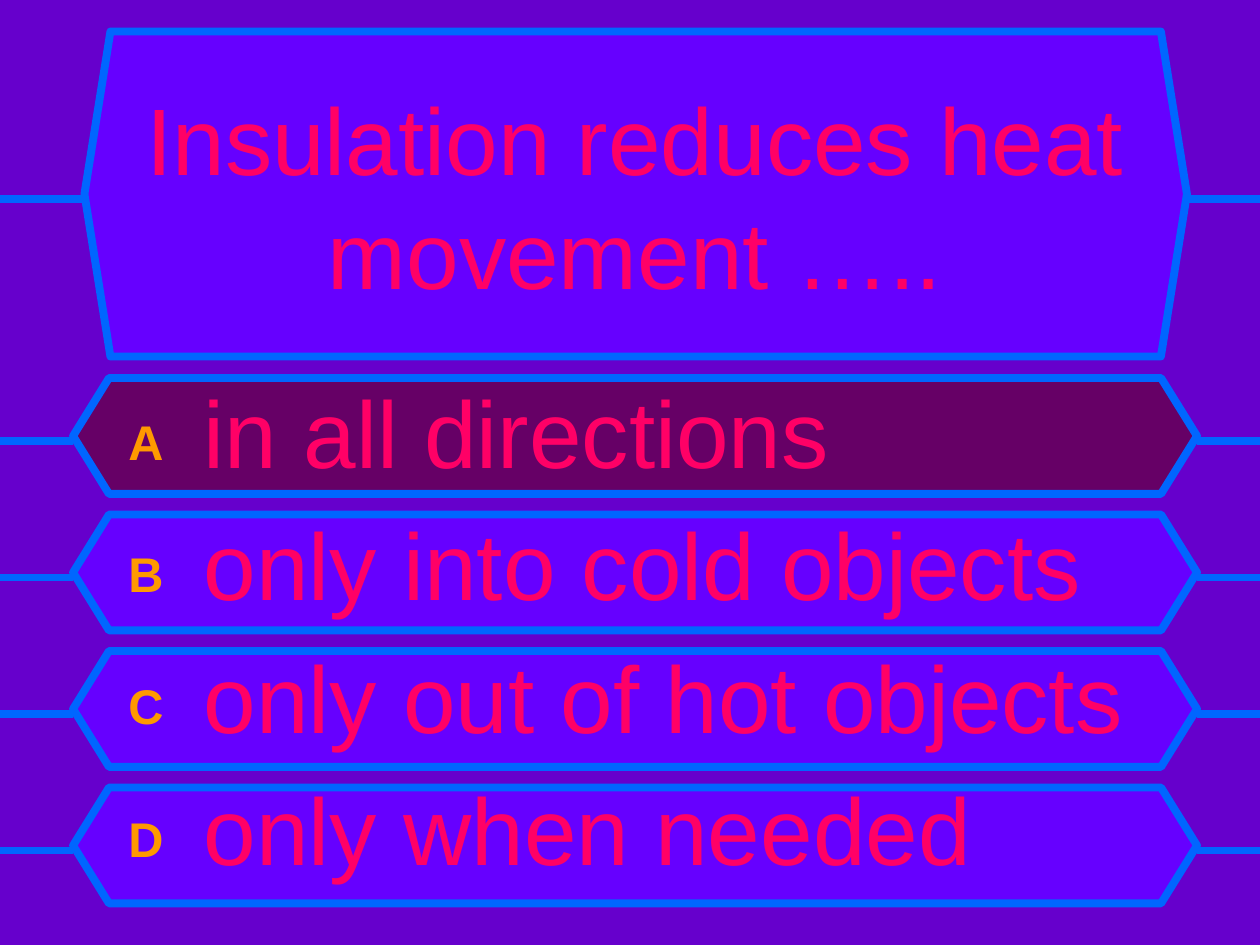
from pptx import Presentation
from pptx.dml.color import RGBColor
from pptx.enum.shapes import MSO_CONNECTOR as Connector, MSO_SHAPE as Shape
from pptx.enum.text import MSO_ANCHOR as Anchor, PP_ALIGN as Align
from pptx.oxml.ns import qn
from pptx.util import Inches, Pt
from lxml import etree

BACKGROUND = "6600CC"
PANEL = "6600FF"
HIGHLIGHT = "660066"
OUTLINE = "0066FF"
TEXT = "FF0066"
LETTER = "FF9900"
SLIDE_WIDTH = 10
ANSWER_TOP, ANSWER_PITCH = 3, 13 / 12
ANSWERS = ["in all directions", "only into cold objects",
           "only out of hot objects", "only when needed"]


def color(value):
    return RGBColor.from_string(value)


def style_line(line):
    line.color.rgb = color(OUTLINE)
    line.width = Pt(4.5)


def style_run(run, size, value, bold=False):
    run.font.name = "Arial"
    run.font.size = Pt(size)
    run.font.bold = bold
    run.font.color.rgb = color(value)


def add_rule(slide, start, end, y):
    rule = slide.shapes.add_connector(
        Connector.STRAIGHT, Inches(start), Inches(y), Inches(end), Inches(y))
    style_line(rule.line)
    etree.SubElement(rule._element.spPr, qn("a:effectLst"))


def add_panel(slide, left, top, width, height, point, fill, rule_y):
    """Hexagon with a rule running from each side to the slide edge."""
    panel = slide.shapes.add_shape(
        Shape.HEXAGON, Inches(left), Inches(top), Inches(width), Inches(height))
    panel.adjustments[0] = point
    panel.shadow.inherit = False
    panel.fill.solid()
    panel.fill.fore_color.rgb = color(fill)
    style_line(panel.line)
    add_rule(slide, left, 0, rule_y)
    add_rule(slide, SLIDE_WIDTH, left + width, rule_y)


def add_text_frame(slide, left, top, width, height, anchor):
    box = slide.shapes.add_textbox(
        Inches(left), Inches(top), Inches(width), Inches(height))
    text_frame = box.text_frame
    text_frame.word_wrap = True
    text_frame.vertical_anchor = anchor
    return text_frame


def add_question(slide, left, top, width, height, question):
    add_panel(slide, left, top, width, height, 0.08, PANEL, 1.58)
    text_frame = add_text_frame(slide, left + 0.16, top + 0.17,
                                width - 0.33, height - 0.33, Anchor.MIDDLE)
    text_frame.text = question
    paragraph = text_frame.paragraphs[0]
    paragraph.alignment = Align.CENTER
    style_run(paragraph.runs[0], 54, TEXT)


def add_answers(slide, left, top, width, height, answers, chosen):
    # Answer panels
    for index in range(len(answers)):
        panel_top = top + index * ANSWER_PITCH
        fill = HIGHLIGHT if index == chosen else PANEL
        add_panel(slide, left, panel_top, width, height, 0.31, fill, panel_top + 0.5)

    # One text box holds all the lettered answers
    text_frame = add_text_frame(slide, left + 0.34, top - 0.08,
                                width - 0.59, 4.33, Anchor.TOP)
    for index, answer in enumerate(answers):
        paragraph = text_frame.paragraphs[0] if index == 0 else text_frame.add_paragraph()
        if index:
            paragraph.space_before = Pt(10.8)
        properties = paragraph._p.get_or_add_pPr()
        properties.set("marL", str(Inches(0.6)))
        properties.set("indent", str(-Inches(0.6)))
        letter = paragraph.add_run()
        letter.text = "ABCD"[index] + "\t"
        style_run(letter, 48, LETTER, bold=True)
        letter.font._element.set("baseline", "10000")
        wording = paragraph.add_run()
        wording.text = answer
        style_run(wording, 54, TEXT)


def main():
    presentation = Presentation()
    presentation.slide_width = Inches(SLIDE_WIDTH)
    presentation.slide_height = Inches(7.5)
    slide = presentation.slides.add_slide(presentation.slide_layouts[6])
    slide.background.fill.solid()
    slide.background.fill.fore_color.rgb = color(BACKGROUND)

    add_question(slide, 0.67, 0.25, 8.75, 2.58, "Insulation reduces heat movement …..")
    add_answers(slide, 0.58, ANSWER_TOP, 8.92, 0.92, ANSWERS, chosen=0)
    presentation.save("out.pptx")


if __name__ == "__main__":
    main()
